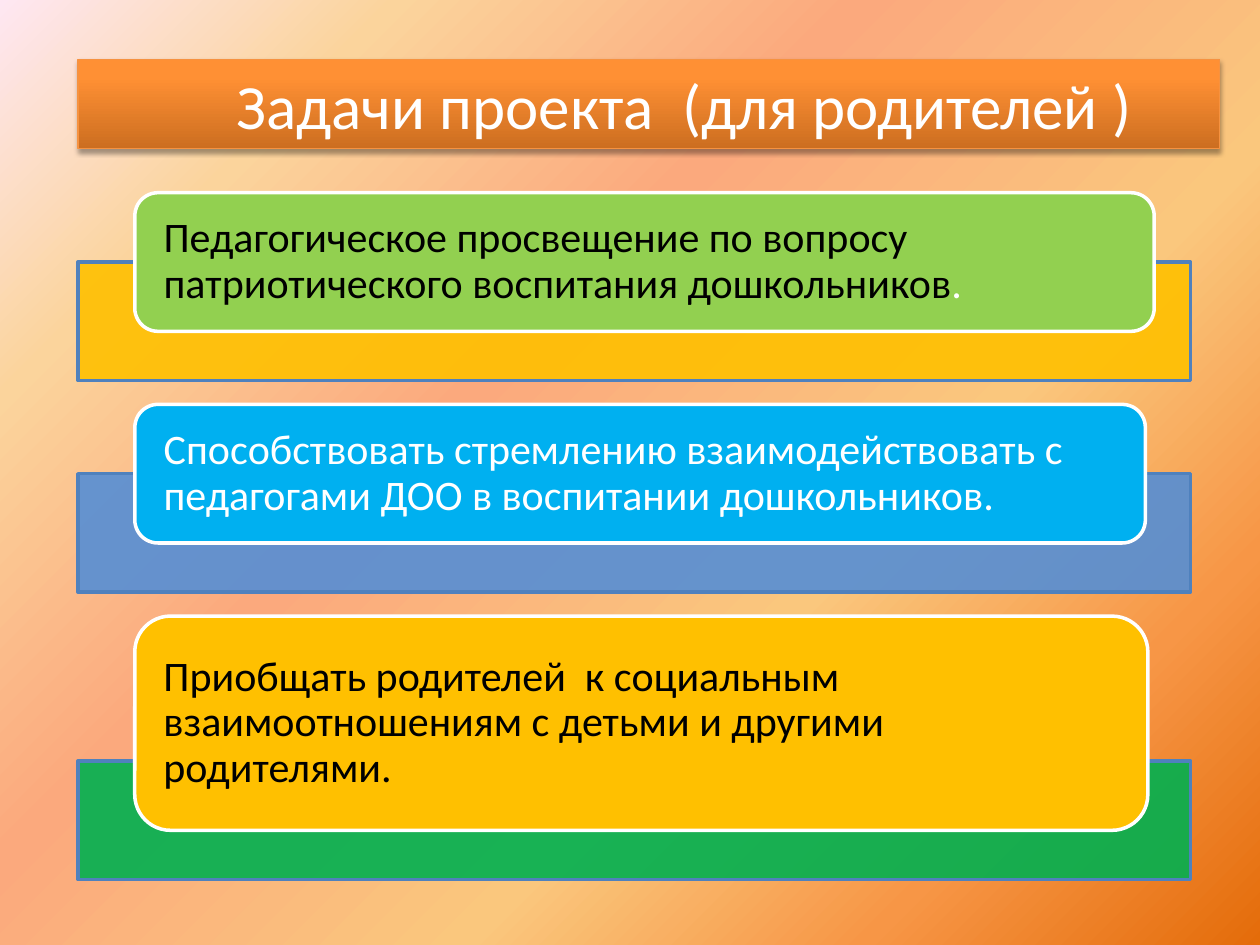
from lxml import etree
from pptx import Presentation
from pptx.dml.color import RGBColor
from pptx.enum.shapes import MSO_SHAPE as SHAPE
from pptx.enum.text import MSO_ANCHOR as ANCHOR, PP_ALIGN as ALIGN
from pptx.oxml.ns import qn
from pptx.util import Inches, Pt

FONT = "Calibri"
BLACK = RGBColor(0, 0, 0)
WHITE = RGBColor(255, 255, 255)
AMBER = RGBColor(0xFF, 0xC0, 0x00)
LIME = RGBColor(0x92, 0xD0, 0x50)
SKY = RGBColor(0x00, 0xB0, 0xF0)
BLUE = RGBColor(0x55, 0x8E, 0xD5)
GREEN = RGBColor(0x00, 0xB0, 0x50)
BAR_LINE = RGBColor(0x4F, 0x81, 0xBD)
TITLE_LINE = RGBColor(0xF6, 0x92, 0x40)

BACKGROUND_STOPS = [(0, "E46C0A"), (18, "F79646"), (36, "FAC77D"),
                    (61, "FBA97D"), (82, "FBD49C"), (100, "FEE7F2")]
TITLE_STOPS = [(0, "CC6E20"), (80, "FF9034"), (100, "FF9136")]

TITLE = "Задачи проекта  (для родителей )"
# text runs with colours, card width, card height, card fill, bar fill
TASKS = [
    ([("Педагогическое просвещение по вопросу патриотического воспитания "
       "дошкольников", BLACK), (".", WHITE)], 8.09, 1.1, LIME, AMBER),
    ([("Способствовать стремлению взаимодействовать с педагогами ДОО "
       "в воспитании дошкольников.", WHITE)], 8.02, 1.1, SKY, BLUE),
    ([("Приобщать родителей  к социальным взаимоотношениям с детьми "
       "и другими родителями.", BLACK)], 8.04, 1.7, AMBER, GREEN),
]

LEFT, BAR_WIDTH, BAR_HEIGHT = 0.62, 8.83, 0.94
CARD_LEFT, FIRST_CARD_TOP, CARD_GAP = 1.07, 1.53, 0.58
BAR_OVERLAP = 0.55
TEXT_INSET = 0.23
CORNER_INSET = 0.05  # share of the height a rounded corner adds to the inset


def add_child(parent, tag, **attributes):
    return etree.SubElement(parent, qn(tag), {k: str(v) for k, v in attributes.items()})


def set_gradient(fill, owner, stops):
    """Give the fill its stops and return the gradFill element for a direction."""
    fill.gradient()
    gradient = next(owner.iter(qn("a:gradFill")))
    for child in list(gradient):
        gradient.remove(child)
    stop_list = add_child(gradient, "a:gsLst")
    for position, color in stops:
        stop = add_child(stop_list, "a:gs", pos=position * 1000)
        add_child(stop, "a:srgbClr", val=color)
    return gradient


def add_box(slide, kind, left, top, width, height, line_color, line_width, color=None):
    shape = slide.shapes.add_shape(kind, *map(Inches, (left, top, width, height)))
    shape.shadow.inherit = False
    shape.line.color.rgb = line_color
    shape.line.width = Pt(line_width)
    if color is not None:
        shape.fill.solid()
        shape.fill.fore_color.rgb = color
    return shape


def add_run(paragraph, text, size, color):
    run = paragraph.add_run()
    run.text = text
    run.font.name = FONT
    run.font.size = Pt(size)
    run.font.color.rgb = color


def paint_background(slide):
    gradient = set_gradient(slide.background.fill, slide.element, BACKGROUND_STOPS)
    direction = add_child(gradient, "a:path", path="circle")
    add_child(direction, "a:fillToRect", l=100000, t=100000)


def add_title(slide):
    shape = add_box(slide, SHAPE.RECTANGLE, LEFT, 0.47, 9.06, 0.71, TITLE_LINE, 0.75)
    gradient = set_gradient(shape.fill, shape.element, TITLE_STOPS)
    add_child(gradient, "a:lin", ang=270 * 60000, scaled=0)
    effects = next(shape.element.iter(qn("a:effectLst")))
    shadow = add_child(effects, "a:outerShdw", blurRad=Pt(3.1), dist=Pt(1.8),
                       dir=90 * 60000, rotWithShape=0)
    add_child(add_child(shadow, "a:srgbClr", val="000000"), "a:alpha", val=35000)
    frame = shape.text_frame
    frame.word_wrap = True
    frame.margin_left = Inches(0.66)
    frame.paragraphs[0].alignment = ALIGN.CENTER
    add_run(frame.paragraphs[0], TITLE, 36, WHITE)


def add_bar(slide, top, color):
    bar = add_box(slide, SHAPE.RECTANGLE, LEFT, top, BAR_WIDTH, BAR_HEIGHT,
                  BAR_LINE, 2, color)
    fill_color = bar.element.spPr.find(qn("a:solidFill"))[0]
    add_child(fill_color, "a:alpha", val=90000)


def add_card(slide, top, width, height, color, runs):
    card = add_box(slide, SHAPE.ROUNDED_RECTANGLE, CARD_LEFT, top, width, height,
                   WHITE, 2, color)
    frame = card.text_frame
    frame.word_wrap = True
    frame.vertical_anchor = ANCHOR.MIDDLE
    frame.margin_left = frame.margin_right = Inches(TEXT_INSET - CORNER_INSET * height)
    frame.margin_top = frame.margin_bottom = 0
    paragraph = frame.paragraphs[0]
    paragraph.alignment = ALIGN.LEFT
    paragraph.line_spacing = 0.9
    for text, text_color in runs:
        add_run(paragraph, text, 24, text_color)


def main():
    presentation = Presentation()
    presentation.slide_width, presentation.slide_height = Inches(10), Inches(7.5)
    slide = presentation.slides.add_slide(presentation.slide_layouts[6])
    paint_background(slide)
    add_title(slide)
    top = FIRST_CARD_TOP
    for runs, width, height, card_color, bar_color in TASKS:
        add_bar(slide, top + height - BAR_OVERLAP, bar_color)
        add_card(slide, top, width, height, card_color, runs)
        top += height + CARD_GAP
    presentation.save("out.pptx")


if __name__ == "__main__":
    main()
